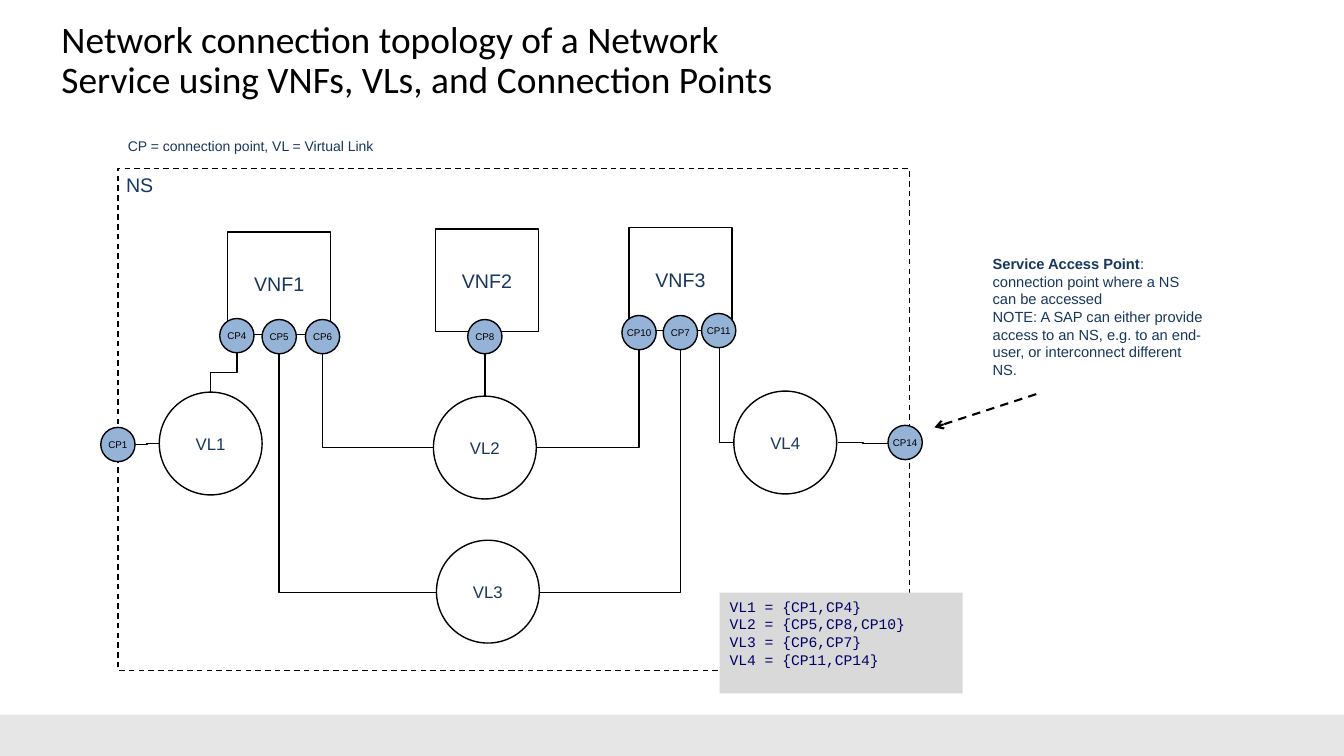
from dataclasses import dataclass

from lxml import etree
from pptx import Presentation
from pptx.dml.color import RGBColor
from pptx.enum.dml import MSO_LINE
from pptx.enum.shapes import MSO_CONNECTOR, MSO_SHAPE
from pptx.enum.text import MSO_ANCHOR, PP_ALIGN
from pptx.oxml.ns import qn
from pptx.util import Inches, Pt

BLACK = RGBColor(0x00, 0x00, 0x00)
NAVY = RGBColor(0x17, 0x37, 0x5E)
CODE_BLUE = RGBColor(0x00, 0x00, 0x66)
POINT_BLUE = RGBColor(0x95, 0xB3, 0xD7)
BOX_GREY = RGBColor(0xD9, 0xD9, 0xD9)
FOOTER_GREY = RGBColor(0xE7, 0xE6, 0xE6)

CELL = Inches(0.1)
COLS, ROWS = 133.33, 75
NODE, POINT = 10.2, 3.4


@dataclass(frozen=True)
class Style:
    shape: MSO_SHAPE
    side: float
    size: float
    color: RGBColor
    fill: RGBColor | None = None


@dataclass(frozen=True)
class Node:
    label: str
    col: float
    row: float
    style: Style


@dataclass(frozen=True)
class Link:
    start: tuple[float, float]
    end: tuple[float, float]
    preset: str


VNF = Style(MSO_SHAPE.RECTANGLE, NODE, 14, NAVY)
VL = Style(MSO_SHAPE.OVAL, NODE, 12, NAVY)
CP = Style(MSO_SHAPE.OVAL, POINT, 7, BLACK, POINT_BLUE)

NODES = [
    Node("VNF1", 22.6, 23, VNF),
    Node("VNF2", 43.2, 22.7, VNF),
    Node("VNF3", 62.4, 22.6, VNF),
    Node("VL1", 15.8, 38.9, VL),
    Node("VL2", 43, 39.3, VL),
    Node("VL3", 43.3, 53.6, VL),
    Node("VL4", 72.8, 38.8, VL),
    Node("CP1", 10, 42.4, CP),
    Node("CP4", 21.8, 31.6, CP),
    Node("CP5", 26, 31.7, CP),
    Node("CP6", 30.3, 31.7, CP),
    Node("CP8", 46.4, 31.7, CP),
    Node("CP10", 61.7, 31.3, CP),
    Node("CP7", 65.8, 31.3, CP),
    Node("CP11", 69.6, 31.1, CP),
    Node("CP14", 88.1, 42.2, CP),
]

CORNER, STEP, STRAIGHT = "bentConnector2", "bentConnector3", "line"
LINKS = [
    Link((53.2, 44.4), (63.4, 34.7), CORNER),
    Link((43, 44.4), (32, 35.1), CORNER),
    Link((43.3, 58.8), (27.7, 35.1), CORNER),
    Link((53.5, 58.8), (67.5, 34.7), CORNER),
    Link((72.8, 43.9), (71.4, 34.5), CORNER),
    Link((15.8, 44), (13.4, 44.1), STEP),
    Link((83.1, 43.9), (88.1, 44), STEP),
    Link((48.1, 35.1), (48.1, 39.3), STRAIGHT),
]

TITLE = "Network connection topology of a Network \vService using VNFs, VLs, and Connection Points"
MEMBERS = [
    "VL1 = {CP1,CP4}",
    "VL2 = {CP5,CP8,CP10}",
    "VL3 = {CP6,CP7}",
    "VL4 = {CP11,CP14}",
]
SAP = "Service Access Point"
SAP_MEANING = ": connection point where a NS can be accessed"
SAP_NOTE = (
    "NOTE: A SAP can either provide access to an NS, e.g. to an end-user, "
    "or interconnect different NS."
)


def grid(*cells: float) -> list[int]:
    return [round(c * CELL) for c in cells]


def add_box(slide, kind, at, fill=None, line=None):
    sp = slide.shapes.add_shape(kind, *grid(*at))
    sp.shadow.inherit = False
    if fill is None:
        sp.fill.background()
    else:
        sp.fill.solid()
        sp.fill.fore_color.rgb = fill
    if line is None:
        sp.line.fill.background()
    else:
        sp.line.color.rgb = line
        sp.line.width = Pt(1)
    return sp


def write(sp, lines: list[str], size: float, color: RGBColor, font: str = "Arial",
          align=PP_ALIGN.LEFT, anchor=MSO_ANCHOR.TOP, wrap: bool = True):
    tf = sp.text_frame
    tf.text = "\n".join(lines)
    tf.word_wrap = wrap
    tf.vertical_anchor = anchor
    for p in tf.paragraphs:
        p.alignment = align
        for r in p.runs:
            r.font.name = font
            r.font.size = Pt(size)
            r.font.color.rgb = color
    return tf


def add_node(slide, node: Node) -> None:
    style = node.style
    at = (node.col, node.row, style.side, style.side)
    sp = add_box(slide, style.shape, at, style.fill, BLACK)
    write(sp, [node.label], style.size, style.color,
          align=PP_ALIGN.CENTER, anchor=MSO_ANCHOR.MIDDLE, wrap=False)


def add_link(slide, link: Link, width: float = 1):
    kind = MSO_CONNECTOR.STRAIGHT if link.preset == STRAIGHT else MSO_CONNECTOR.ELBOW
    cxn = slide.shapes.add_connector(kind, *grid(*link.start, *link.end))
    cxn.line.color.rgb = BLACK
    cxn.line.width = Pt(width)
    props = cxn._element.spPr
    props.find(qn("a:prstGeom")).set("prst", link.preset)
    etree.SubElement(props, qn("a:effectLst"))
    return cxn


def add_text(slide, at, lines, size, color, font="Arial"):
    sp = slide.shapes.add_textbox(*grid(*at))
    return write(sp, lines, size, color, font)


def main() -> None:
    prs = Presentation()
    prs.slide_width, prs.slide_height = grid(COLS, ROWS)
    slide = prs.slides.add_slide(prs.slide_layouts[6])

    add_box(slide, MSO_SHAPE.RECTANGLE, (0, 70.9, COLS, ROWS - 70.9), FOOTER_GREY)
    tf = add_text(slide, (6.1, 2.1, 121.2, 8.3), [TITLE], 26.7, BLACK, "Calibri")
    tf.margin_left = tf.margin_right = tf.margin_top = tf.margin_bottom = 0
    tf.paragraphs[0].line_spacing = 0.9

    ns = add_box(slide, MSO_SHAPE.RECTANGLE, (11.7, 16.7, 78.5, 49.8), line=BLACK)
    ns.line.dash_style = MSO_LINE.DASH
    tf = write(ns, ["NS"], 14, NAVY)
    tf.margin_left = Inches(0.08)
    add_text(slide, (11.7, 13.2, 32.9, 3.3),
             ["CP = connection point, VL = Virtual Link"], 10, NAVY)

    for node in NODES:
        add_node(slide, node)
    for link in LINKS:
        add_link(slide, link)
    turned = add_link(slide, Link((20.25, 35.65), (24.15, 38.25), STEP))
    turned._element.spPr.find(qn("a:xfrm")).set("rot", str(90 * 60000))

    legend = add_box(slide, MSO_SHAPE.RECTANGLE, (71.4, 58.8, 24.1, 10), BOX_GREY)
    write(legend, MEMBERS, 10.5, CODE_BLUE, "Courier New")

    tf = add_text(slide, (97.5, 24.8, 23, 13.4), [SAP, SAP_NOTE], 10.5, NAVY)
    p = tf.paragraphs[0]
    p.runs[0].font.bold = True
    r = p.add_run()
    r.text = SAP_MEANING
    r.font.name = "Arial"
    r.font.size = Pt(10.5)
    r.font.color.rgb = NAVY

    arrow = add_link(slide, Link((102.8, 39.1), (92.7, 42.4), STRAIGHT), 1.5)
    arrow.line.dash_style = MSO_LINE.DASH
    etree.SubElement(arrow.line._get_or_add_ln(), qn("a:tailEnd"), type="arrow")

    prs.save("out.pptx")


if __name__ == "__main__":
    main()
